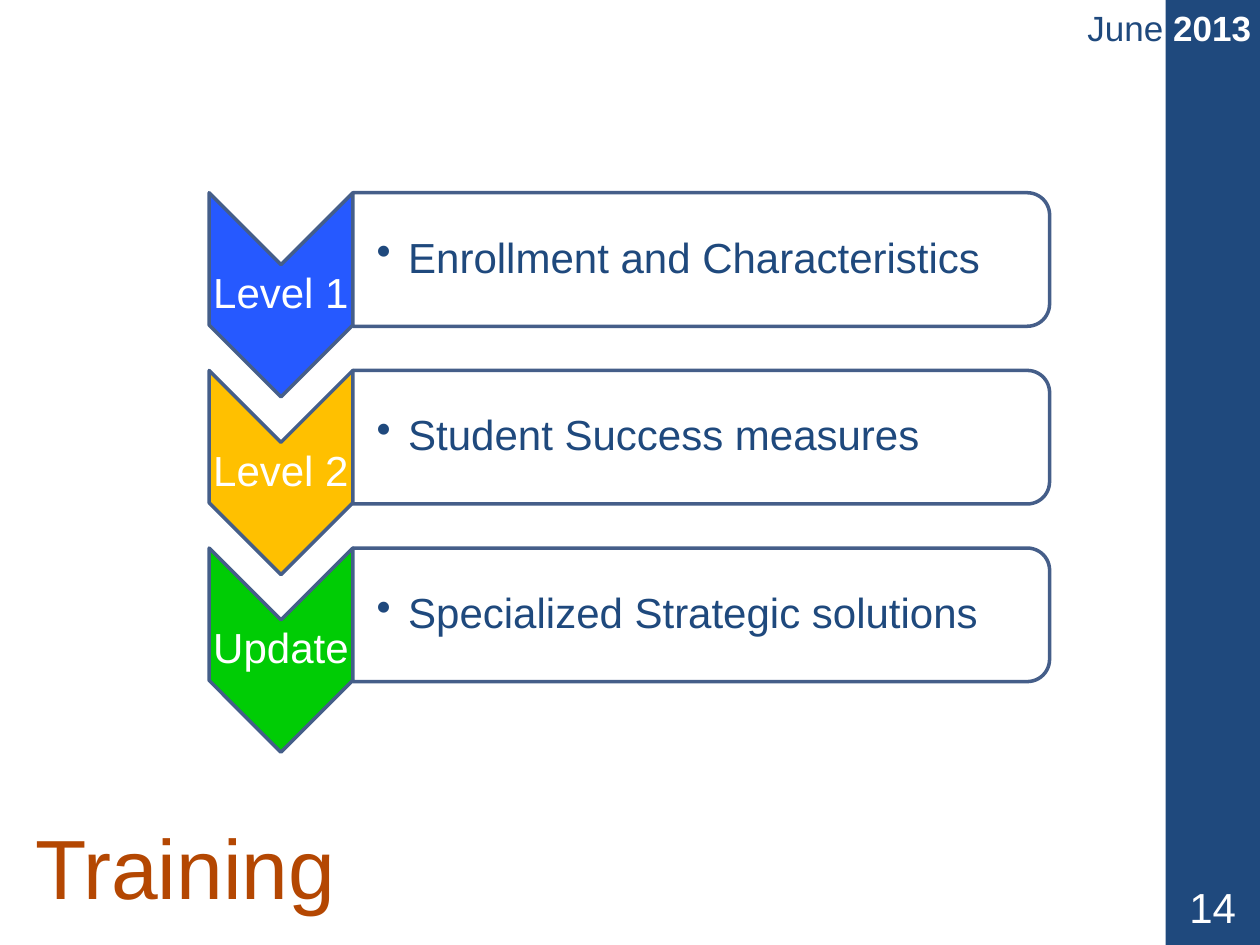
from typing import NamedTuple

from lxml import etree
from pptx import Presentation
from pptx.dml.color import RGBColor
from pptx.enum.shapes import MSO_SHAPE
from pptx.enum.text import MSO_ANCHOR, PP_ALIGN
from pptx.oxml.ns import qn
from pptx.util import Inches, Pt

RECT = MSO_SHAPE.RECTANGLE
CHEVRON = MSO_SHAPE.CHEVRON
ROUND_END = MSO_SHAPE.ROUND_2_SAME_RECTANGLE
LEFT, CENTER, RIGHT = PP_ALIGN.LEFT, PP_ALIGN.CENTER, PP_ALIGN.RIGHT
TOP, MIDDLE = MSO_ANCHOR.TOP, MSO_ANCHOR.MIDDLE

WHITE = RGBColor(0xFF, 0xFF, 0xFF)
NAVY = RGBColor(0x1F, 0x49, 0x7D)
RUST = RGBColor(0xB4, 0x47, 0x02)
OUTLINE = RGBColor(0x45, 0x5E, 0x89)
BLUE = RGBColor(0x26, 0x59, 0xFF)
AMBER = RGBColor(0xFF, 0xC0, 0x00)
GREEN = RGBColor(0x00, 0xCC, 0x05)

FONT = "Arial"
SLIDE_W, SLIDE_H = 10, 7.5
SIDEBAR_W = 0.075 * SLIDE_W
SIDEBAR_X = SLIDE_W - SIDEBAR_W

# Grid of the level list, in inches
LIST_X, LIST_Y = 1.66, 1.53
ROW_PITCH = 1.41
CHEVRON_W, CHEVRON_H = 1.14, 1.62
BAR_W, BAR_H = 5.53, 1.06
NOTCH = CHEVRON_W / 2
TEXT_INSETS = (0.02, 0.02, 0.02, 0.02)
BULLET_INSETS = (0.19, 0.02, 0.02, 0.02)


class Box(NamedTuple):
    x: float
    y: float
    w: float
    h: float

    def turned(self) -> "Box":
        """Frame that covers this box once it is rotated by 90 degrees."""
        shift = (self.w - self.h) / 2
        return Box(self.x + shift, self.y - shift, self.h, self.w)

    def emu(self) -> list:
        return [Inches(v) for v in self]


class Level(NamedTuple):
    label: str
    topic: str
    color: RGBColor


LEVELS = [
    Level("Level 1", "Enrollment and Characteristics", BLUE),
    Level("Level 2", "Student Success measures", AMBER),
    Level("Update", "Specialized Strategic solutions", GREEN),
]


def add_filled(s, kind, box: Box, fill: RGBColor, line: RGBColor | None = None):
    sp = s.shapes.add_shape(kind, *box.emu())
    sp.shadow.inherit = False
    sp.fill.solid()
    sp.fill.fore_color.rgb = fill
    if line is None:
        sp.line.fill.background()
    else:
        sp.line.color.rgb = line
        sp.line.width = Pt(2)
    return sp


def add_turned(s, kind, box: Box, fill: RGBColor) -> None:
    """Add an outlined shape that points down or right after a quarter turn."""
    add_filled(s, kind, box.turned(), fill, OUTLINE).rotation = 90


def add_text(s, box: Box, text: str, size: float, color: RGBColor, align=LEFT,
             anchor=TOP, insets=(0.1, 0.05, 0.1, 0.05)):
    tf = s.shapes.add_textbox(*box.emu()).text_frame
    tf.word_wrap = True
    tf.vertical_anchor = anchor
    (tf.margin_left, tf.margin_top,
     tf.margin_right, tf.margin_bottom) = [Inches(v) for v in insets]
    p = tf.paragraphs[0]
    p.text = text
    p.alignment = align
    style_run(p.runs[0], size, color)
    return p


def style_run(r, size: float, color: RGBColor) -> None:
    r.font.name = FONT
    r.font.size = Pt(size)
    r.font.color.rgb = color


def add_bullet(p) -> None:
    pPr = p._p.get_or_add_pPr()
    pPr.set("marL", str(Inches(0.25)))
    pPr.set("indent", str(Inches(-0.25)))
    etree.SubElement(pPr, qn("a:buChar")).set("char", "•")


def add_level(s, row: int, level: Level) -> None:
    y = LIST_Y + row * ROW_PITCH
    chevron = Box(LIST_X, y, CHEVRON_W, CHEVRON_H)
    add_turned(s, CHEVRON, chevron, level.color)
    label = Box(LIST_X, y + NOTCH, CHEVRON_W, CHEVRON_H - 2 * NOTCH)
    p = add_text(s, label, level.label, 24, WHITE, CENTER, MIDDLE, TEXT_INSETS)
    p.line_spacing = 0.9

    bar = Box(LIST_X + CHEVRON_W, y, BAR_W, BAR_H)
    add_turned(s, ROUND_END, bar, WHITE)
    p = add_text(s, bar, level.topic, 24, NAVY, LEFT, MIDDLE, BULLET_INSETS)
    add_bullet(p)
    p.line_spacing = 0.9


def add_date(s) -> None:
    box = Box(SLIDE_W / 2, 0, SLIDE_W / 2, 0.44)
    p = add_text(s, box, "June ", 20, NAVY, RIGHT, insets=(0.1, 0.05, 0.07, 0.05))
    r = p.add_run()
    r.text = "2013"
    style_run(r, 20, WHITE)
    r.font.bold = True


def main() -> None:
    prs = Presentation()
    prs.slide_width, prs.slide_height = Inches(SLIDE_W), Inches(SLIDE_H)
    s = prs.slides.add_slide(prs.slide_layouts[6])

    add_filled(s, RECT, Box(SIDEBAR_X, 0, SIDEBAR_W, SLIDE_H), NAVY)
    add_date(s)
    add_text(s, Box(SIDEBAR_X, 7, SIDEBAR_W, 0.4), "14", 24, WHITE, CENTER, MIDDLE)
    add_text(s, Box(0.18, 6.42, 8.99, 0.91), "Training", 48, RUST)
    for row, level in enumerate(LEVELS):
        add_level(s, row, level)

    prs.save("out.pptx")


if __name__ == "__main__":
    main()
